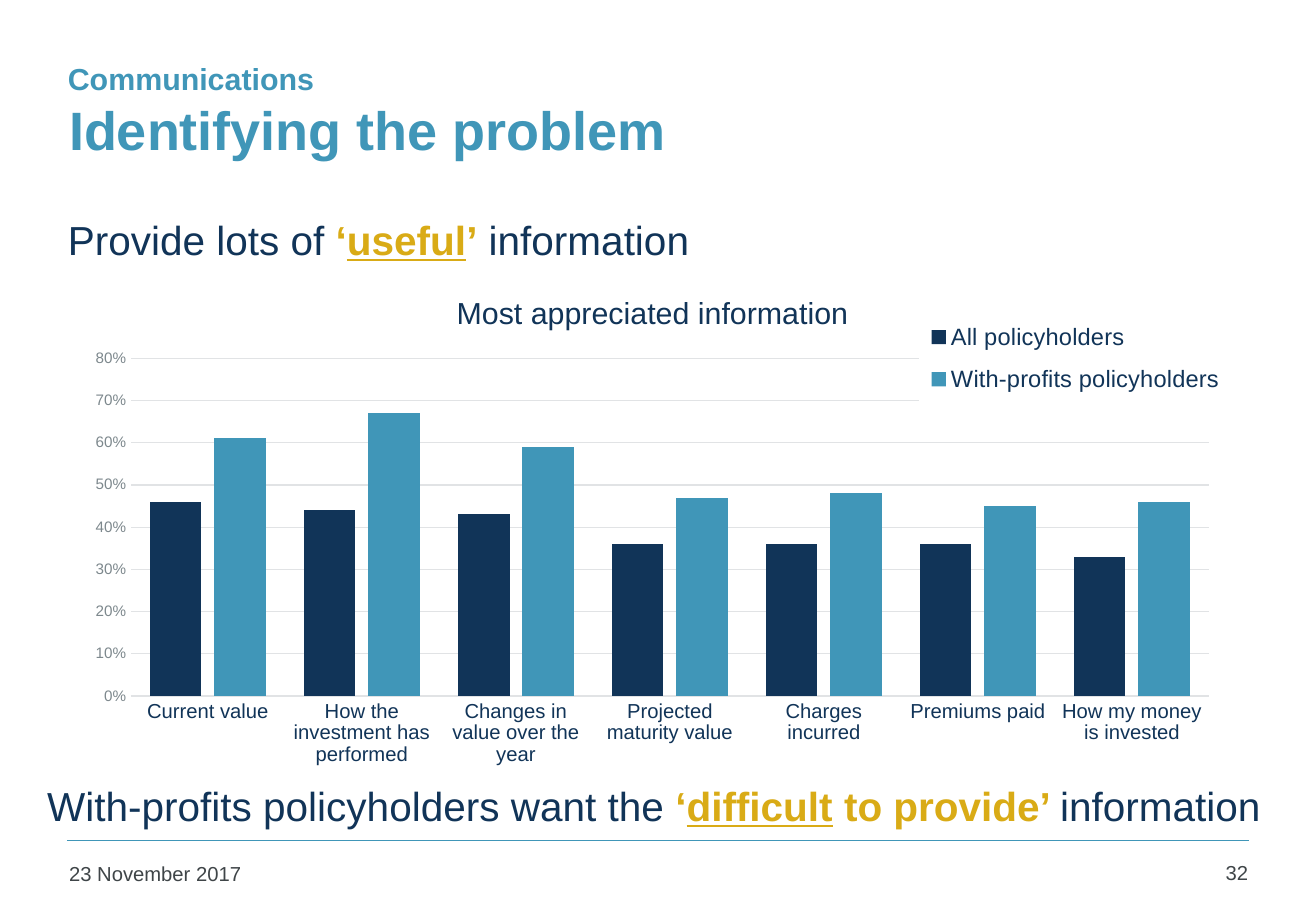
from lxml import etree
from pptx import Presentation
from pptx.chart.data import CategoryChartData
from pptx.dml.color import RGBColor
from pptx.enum.chart import XL_CHART_TYPE, XL_LEGEND_POSITION, XL_TICK_MARK
from pptx.enum.shapes import MSO_CONNECTOR
from pptx.enum.text import MSO_ANCHOR, PP_ALIGN
from pptx.oxml import parse_xml
from pptx.oxml.ns import nsdecls, qn
from pptx.util import Inches, Pt

COLUMNS = XL_CHART_TYPE.COLUMN_CLUSTERED
LEGEND_RIGHT = XL_LEGEND_POSITION.RIGHT
NO_TICK = XL_TICK_MARK.NONE
STRAIGHT = MSO_CONNECTOR.STRAIGHT
TOP, MIDDLE = MSO_ANCHOR.TOP, MSO_ANCHOR.MIDDLE
LEFT, RIGHT = PP_ALIGN.LEFT, PP_ALIGN.RIGHT

COLORS = {"navy": "113458", "blue": "4096B8", "gold": "D9AB16", "text": "3F4548",
          "axis": "7D888D", "grid": "E1E3E5", "white": "FFFFFF"}
FONT = "Arial"
CATEGORIES = ["Current value", "How the investment has performed",
              "Changes in value over the year", "Projected maturity value",
              "Charges incurred", "Premiums paid", "How my money is invested"]
SERIES = [("All policyholders", "navy", [0.46, 0.44, 0.43, 0.36, 0.36, 0.36, 0.33]),
          ("With-profits policyholders", "blue", [0.61, 0.67, 0.59, 0.47, 0.48, 0.45, 0.46])]
PLAIN = {"color": "navy"}
STRONG = {"color": "gold", "bold": True}
STRESSED = {**STRONG, "underline": True}


def rgb(name):
    """Return the named palette colour."""
    return RGBColor.from_string(COLORS[name])


def style_font(font, size, color, **formats):
    """Set typeface, size, colour and further formats on a font."""
    font.color.rgb = rgb(color)
    values = {"name": FONT, "size": Pt(size), "bold": False, **formats}
    for name, value in values.items():
        setattr(font, name, value)


def style_line(line, color, width):
    """Give a line its colour and width in points."""
    line.color.rgb = rgb(color)
    line.width = Pt(width)


def add_text(page, box, spans, size, align=LEFT, anchor=TOP, wrap=True):
    """Add one paragraph of formatted spans in the given box."""
    frame = page.shapes.add_textbox(*map(Inches, box)).text_frame
    frame.word_wrap = wrap
    frame.vertical_anchor = anchor
    para = frame.paragraphs[0]
    para.alignment = align
    for text, formats in spans:
        span = para.add_run()
        span.text = text
        style_font(span.font, size, **formats)


def set_layout(element, before, box, inner=False):
    """Place a chart part by fractions of the chart area."""
    for old in element.findall(qn("c:layout")):
        element.remove(old)
    target = '<c:layoutTarget val="inner"/>' if inner else ""
    modes = "".join(f'<c:{side}Mode val="edge"/>' for side in "xy")
    sizes = "".join(f'<c:{side} val="{value}"/>' for side, value in zip("xywh", box))
    layout = parse_xml(f'<c:layout {nsdecls("c")}><c:manualLayout>{target}{modes}{sizes}'
                       '</c:manualLayout></c:layout>')
    element.find(qn(before)).addprevious(layout)


def add_header(page, box):
    """Add the section name above the slide title."""
    left, top, width, height = box
    heading = {"color": "blue", "bold": True}
    add_text(page, box, [("Identifying the problem", heading)], 32, anchor=MIDDLE)
    add_text(page, (left - 0.01, top + 0.01, 2.25, 0.4),
             [("Communications", heading)], 18, wrap=False)


def style_axes(chart):
    """Format the category and percentage axes."""
    for axis, size, color in ((chart.category_axis, 12, "navy"), (chart.value_axis, 9, "axis")):
        axis.major_tick_mark = axis.minor_tick_mark = NO_TICK
        style_font(axis.tick_labels.font, size, color)
    style_line(chart.category_axis.format.line, "grid", 0.75)
    scale = chart.value_axis
    for name, value in {"minimum_scale": 0, "maximum_scale": 0.8, "major_unit": 0.1}.items():
        setattr(scale, name, value)
    scale.format.line.fill.background()
    style_line(scale.major_gridlines.format.line, "grid", 0.75)
    scale.tick_labels.number_format = "0%"
    scale.tick_labels.number_format_is_linked = False


def style_legend(chart):
    """Place the legend on white over the upper right of the plot."""
    chart.has_legend = True
    legend = chart.legend
    legend.position = LEGEND_RIGHT
    legend.include_in_layout = False
    style_font(legend.font, 14, "navy")
    element = legend._element
    set_layout(element, "c:overlay", (0.73, 0.07, 0.27, 0.18))
    fill = parse_xml(f'<c:spPr {nsdecls("c", "a")}><a:solidFill>'
                     f'<a:srgbClr val="{COLORS["white"]}"/></a:solidFill></c:spPr>')
    element.find(qn("c:txPr")).addprevious(fill)


def add_information_chart(page, box):
    """Add the column chart of appreciated information."""
    data = CategoryChartData(number_format="0%")
    data.categories = CATEGORIES
    for name, color, values in SERIES:
        data.add_series(name, values)
    chart = page.shapes.add_chart(COLUMNS, *map(Inches, box), data).chart
    style_font(chart.font, 10, "text")
    chart.has_title = True
    title = chart.chart_title.text_frame
    title.text = "Most appreciated information"
    style_font(title.paragraphs[0].runs[0].font, 18, "navy")
    plot = chart.plots[0]
    for name, value in {"gap_width": 75, "overlap": -25, "vary_by_categories": False}.items():
        setattr(plot, name, value)
    for series, (name, color, values) in zip(plot.series, SERIES):
        series.format.fill.solid()
        series.format.fill.fore_color.rgb = rgb(color)
    style_axes(chart)
    style_legend(chart)
    set_layout(plot._element.getparent(), "c:barChart", (0.05, 0.16, 0.93, 0.61), inner=True)


def add_footer(page, box):
    """Add the rule, date and page number."""
    left, top, width, height = box
    rule = page.shapes.add_connector(STRAIGHT, *map(Inches, (left, top, left + width, top)))
    style_line(rule.line, "blue", 1)
    etree.SubElement(rule._element.spPr, qn("a:effectLst"))
    muted = {"color": "text"}
    add_text(page, (left - 0.08, top + 0.09, 2.39, height), [("23 November 2017", muted)],
             12, anchor=MIDDLE)
    add_text(page, (left + width - 0.68, top + 0.08, 0.77, height), [("32", muted)],
             12, RIGHT, MIDDLE)


def main():
    """Build and save the slide."""
    deck = Presentation()
    deck.slide_width, deck.slide_height = Inches(10.83), Inches(7.5)
    page = deck.slides.add_slide(deck.slide_layouts[6])
    add_footer(page, (0.55, 6.92, 9.73, 0.36))
    add_header(page, (0.47, 0.44, 9.82, 1.25))
    add_text(page, (0.46, 1.72, 9.82, 0.5),
             [("Provide lots of ", PLAIN), ("‘", STRONG), ("useful", STRESSED),
              ("’", STRONG), (" information", PLAIN)], 24)
    add_text(page, (0.29, 6.38, 10.55, 0.5),
             [("With-profits policyholders want the ", PLAIN), ("‘", STRONG),
              ("difficult", STRESSED), (" to provide’ ", STRONG), ("information", PLAIN)],
             24, wrap=False)
    add_information_chart(page, (0.6, 2.22, 9.54, 4.56))
    deck.save("out.pptx")


if __name__ == "__main__":
    main()
